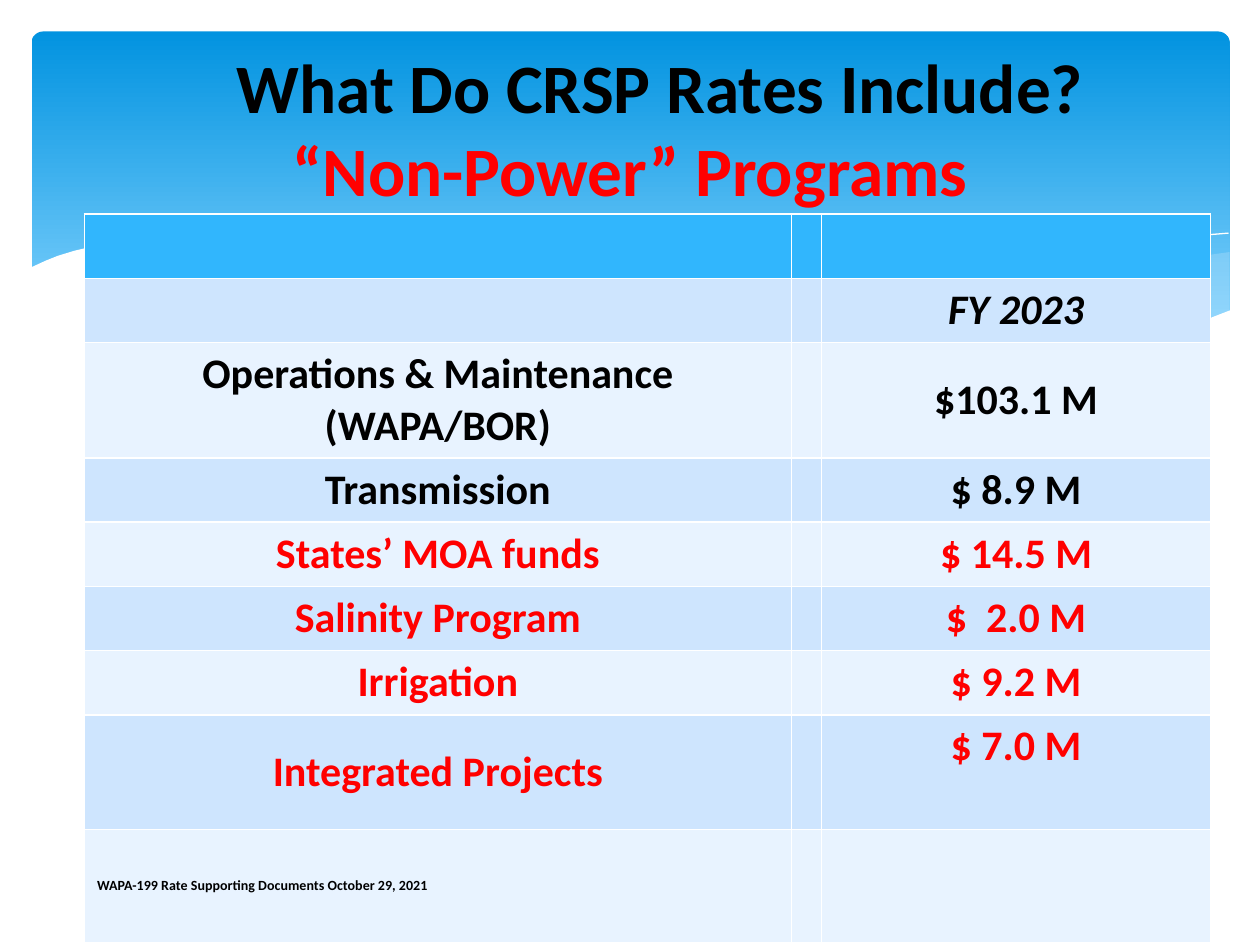
from dataclasses import dataclass

from lxml import etree
from pptx import Presentation
from pptx.dml.color import RGBColor
from pptx.enum import shapes, text
from pptx.oxml import ns
from pptx.util import Inches, Pt


@dataclass(frozen=True)
class Theme:
    font: str = "Calibri"
    black: str = "000000"
    red: str = "FF0000"
    white: str = "FFFFFF"
    sky_top: str = "0293E0"
    sky_bottom: str = "83D3FE"
    mist: str = "C6E7FC"
    header: str = "31B6FD"
    bands: tuple = ("CEE5FE", "E8F3FF")
    title_size: float = 39.6
    body_size: int = 24
    note_size: int = 8


RIGHT_SWELL = [
    (9.76, 2), (9.48, 2.04), (9.21, 2.1), (8.91, 2.16), (8.61, 2.23),
    (8.05, 2.37), (7.53, 2.48), (7.06, 2.57), (6.61, 2.65), (6.91, 2.69),
    (7.19, 2.72), (7.45, 2.75), (7.69, 2.77), (8.03, 2.78), (8.35, 2.77),
    (8.63, 2.75), (8.89, 2.72), (9.13, 2.67), (9.35, 2.62), (9.49, 2.57),
    (9.63, 2.52), (9.76, 2.47),
]
MIDDLE_SWELL = [
    (8.93, 2.73), (8.66, 2.69), (8.07, 2.6), (7.41, 2.47), (6.68, 2.31),
    (6.29, 2.22), (5.98, 2.14), (5.69, 2.08), (5.41, 2.03), (5.14, 1.98),
    (4.89, 1.94), (4.42, 1.89), (3.99, 1.86), (3.61, 1.85), (3.28, 1.87),
    (2.86, 1.91), (3.23, 1.96), (3.62, 2.03), (4.04, 2.11), (4.49, 2.22),
    (5.3, 2.4), (5.84, 2.52), (6.18, 2.58), (6.5, 2.64), (6.8, 2.68),
    (7.09, 2.72), (7.36, 2.75), (7.61, 2.77), (7.96, 2.78), (8.28, 2.78),
    (8.57, 2.77), (8.76, 2.75),
]
LONG_CREST = [
    (3.09, 1.95), (3.28, 1.92), (3.53, 1.89), (3.87, 1.87), (4.16, 1.87),
    (4.5, 1.88), (4.89, 1.9), (5.33, 1.94), (5.82, 2), (6.36, 2.08),
    (6.95, 2.19), (7.6, 2.33), (8.31, 2.51), (9.07, 2.72),
]
RIGHT_CREST = [
    (6.13, 2.57), (6.53, 2.46), (6.95, 2.35), (7.48, 2.23), (8.06, 2.1),
    (8.66, 1.99), (8.95, 1.94), (9.24, 1.9), (9.51, 1.87), (9.75, 1.85),
]
WHITE_WAVE = [
    (9.77, 2.46), (9.59, 2.53), (9.4, 2.59), (9.2, 2.65), (8.99, 2.69),
    (8.75, 2.73), (8.5, 2.75), (8.23, 2.77), (7.93, 2.76), (7.61, 2.75),
    (7.26, 2.72), (6.88, 2.68), (6.48, 2.62), (6.03, 2.54), (5.55, 2.45),
    (5.03, 2.33), (4.47, 2.2), (3.91, 2.07), (3.4, 1.97), (2.92, 1.9),
    (2.5, 1.86), (2.11, 1.84), (1.77, 1.84), (1.46, 1.85), (1.19, 1.87),
    (0.95, 1.91), (0.76, 1.95), (0.59, 1.99), (0.46, 2.03), (0.36, 2.07),
    (0.23, 2.13), (0.23, 3.29), (9.77, 3.29),
]

NOTE = "WAPA-199 Rate Supporting Documents October 29, 2021"
COST_ROWS = [
    ("", ""),
    ("", "FY 2023"),
    ("Operations & Maintenance (WAPA/BOR)", "$103.1 M"),
    ("Transmission", "$ 8.9 M"),
    ("States’ MOA funds", "$ 14.5 M"),
    ("Salinity Program", "$  2.0 M"),
    ("Irrigation", "$ 9.2 M"),
    ("Integrated Projects", "$ 7.0 M"),
    (NOTE, ""),
]
FIRST_NON_POWER_ROW = 4
PROJECTS_ROW = 7
SINGLE, DOUBLE, FOOT = 0.51, 0.91, 0.9
ROW_HEIGHTS = [SINGLE, SINGLE, DOUBLE] + [SINGLE] * 4 + [DOUBLE, FOOT]
COLUMN_WIDTHS = [5.61, 0.23, 3.09]


class SlideBuilder:
    def __init__(self, slide, theme):
        self.slide = slide
        self.theme = theme

    def style(self, paragraph, size, color, italic=False, align=text.PP_ALIGN.CENTER):
        font = paragraph.font
        font.name, font.size = self.theme.font, Pt(size)
        font.bold, font.italic = True, italic
        font.color.rgb = RGBColor.from_string(color)
        paragraph.alignment = align

    def banner(self, left, top, width, height):
        shape = self.slide.shapes.add_shape(
            shapes.MSO_SHAPE.ROUNDED_RECTANGLE,
            Inches(left), Inches(top), Inches(width), Inches(height))
        shape.adjustments[0] = 0.034
        shape.shadow.inherit = False
        shape.line.fill.background()
        shape.fill.gradient()
        shape.fill.gradient_angle = 270
        stops = shape.fill.gradient_stops
        colors = (self.theme.sky_top, self.theme.sky_bottom)
        for stop, position, color in zip(stops, (0, 0.9), colors):
            stop.position = position
            stop.color.rgb = RGBColor.from_string(color)

    def outline(self, points, close):
        start, *rest = [(Inches(x), Inches(y)) for x, y in points]
        builder = self.slide.shapes.build_freeform(*start)
        builder.add_line_segments(rest, close=close)
        shape = builder.convert_to_shape()
        shape.shadow.inherit = False
        return shape

    def wave(self, points, color, opacity=100):
        shape = self.outline(points, True)
        shape.line.fill.background()
        shape.fill.solid()
        shape.fill.fore_color.rgb = RGBColor.from_string(color)
        if opacity < 100:
            fill = shape.fill._xPr.find(ns.qn("a:solidFill"))
            alpha = etree.SubElement(fill[0], ns.qn("a:alpha"))
            alpha.set("val", str(opacity * 1000))

    def crest(self, points):
        shape = self.outline(points, False)
        shape.fill.background()
        shape.line.color.rgb = RGBColor.from_string(self.theme.white)
        shape.line.width = Pt(0)

    def title(self, lines):
        shape = self.slide.shapes.title
        self.slide.shapes._spTree.append(shape._element)
        shape.left, shape.top = Inches(0.5), Inches(0.77)
        shape.width, shape.height = Inches(9), Inches(0.48)
        frame = shape.text_frame
        frame.auto_size = text.MSO_AUTO_SIZE.NONE
        frame.vertical_anchor = text.MSO_ANCHOR.MIDDLE
        frame.text = "\n".join(line for line, _, _ in lines)
        for paragraph, (_, color, indent) in zip(frame.paragraphs, lines):
            self.style(paragraph, self.theme.title_size, color)
            paragraph._p.get_or_add_pPr().set("marL", str(Inches(indent)))

    def cell(self, cell, words, row):
        theme = self.theme
        color = theme.bands[(row - 1) % 2] if row else theme.header
        cell.fill.solid()
        cell.fill.fore_color.rgb = RGBColor.from_string(color)
        cell.vertical_anchor = text.MSO_ANCHOR.MIDDLE
        if not words:
            return
        cell.text = words
        paragraph = cell.text_frame.paragraphs[0]
        if words == NOTE:
            self.style(paragraph, theme.note_size, theme.black, align=text.PP_ALIGN.LEFT)
        else:
            ink = theme.red if row >= FIRST_NON_POWER_ROW else theme.black
            self.style(paragraph, theme.body_size, ink, italic=row == 1)

    def table(self, left, top):
        table = self.slide.shapes.add_table(
            len(COST_ROWS), len(COLUMN_WIDTHS), Inches(left), Inches(top),
            Inches(sum(COLUMN_WIDTHS)), Inches(sum(ROW_HEIGHTS))).table
        for column, width in zip(table.columns, COLUMN_WIDTHS):
            column.width = Inches(width)
        for row, (label, amount) in enumerate(COST_ROWS):
            table.rows[row].height = Inches(ROW_HEIGHTS[row])
            for column, words in enumerate((label, "", amount)):
                self.cell(table.cell(row, column), words, row)
        table.cell(PROJECTS_ROW, 2).vertical_anchor = text.MSO_ANCHOR.TOP


def main():
    presentation = Presentation()
    presentation.slide_width, presentation.slide_height = Inches(10), Inches(7.5)
    slide = presentation.slides.add_slide(presentation.slide_layouts[5])
    theme = Theme()
    builder = SlideBuilder(slide, theme)
    builder.banner(0.25, 0.25, 9.51, 2.7)
    builder.wave(RIGHT_SWELL, theme.mist, 29)
    builder.wave(MIDDLE_SWELL, theme.mist, 40)
    builder.crest(LONG_CREST)
    builder.crest(RIGHT_CREST)
    builder.wave(WHITE_WAVE, theme.white)
    builder.title([
        ("What Do CRSP Rates Include?", theme.black, 0.48),
        ("“Non-Power” Programs", theme.red, 0),
    ])
    builder.table(0.67, 1.7)
    presentation.save("out.pptx")


if __name__ == "__main__":
    main()
